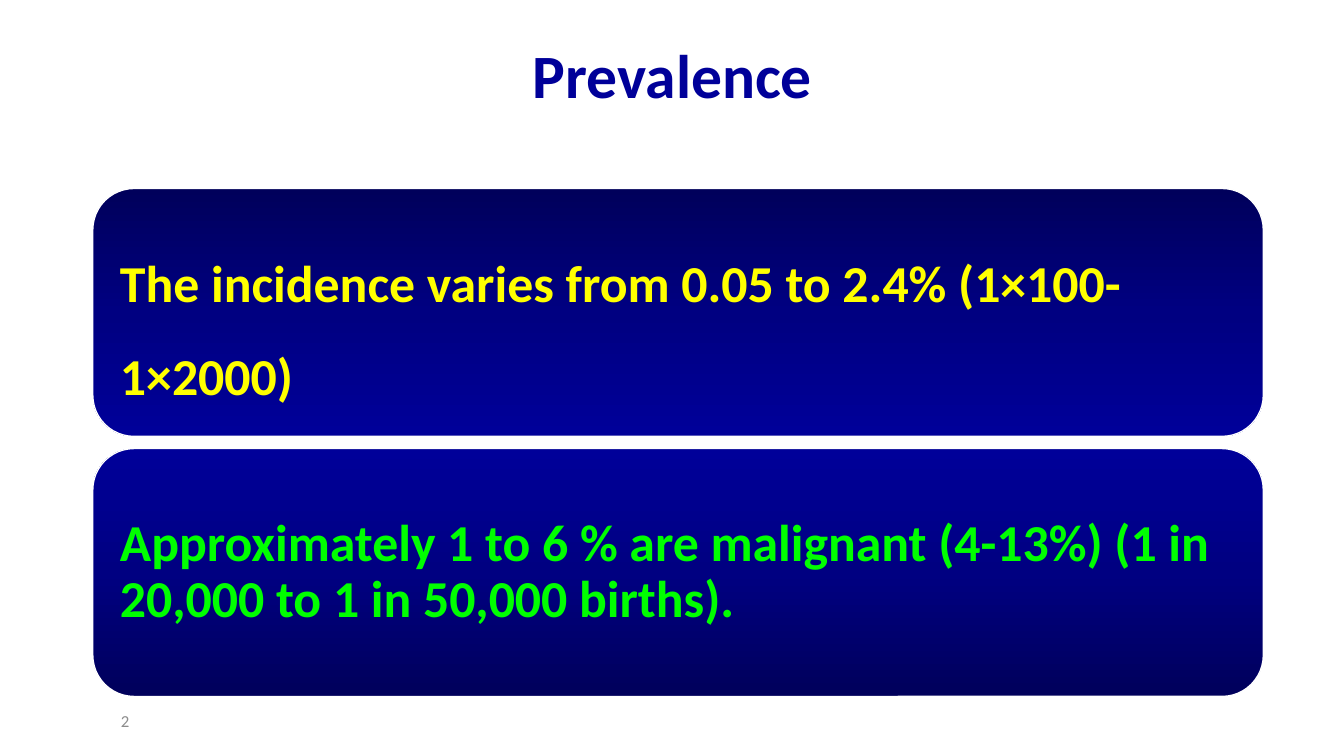
from copy import deepcopy
from dataclasses import dataclass

from pptx import Presentation
from pptx.dml.color import RGBColor
from pptx.enum.shapes import MSO_SHAPE
from pptx.enum.text import MSO_ANCHOR, MSO_AUTO_SIZE, PP_ALIGN
from pptx.oxml.ns import qn
from pptx.util import Inches, Pt


@dataclass(frozen=True)
class Theme:
    """Colours, font and type sizes of the slide."""
    font: str = "Calibri"
    title: str = "000099"
    incidence: str = "FFFF00"
    malignant: str = "00FF00"
    number: str = "8C8C8C"
    outline: str = "FFFFFF"
    gradient: tuple = ((0, "00005B"), (0.5, "000081"), (1, "000099"))
    title_size: int = 44
    card_size: int = 37
    number_size: int = 12


THEME = Theme()
TITLE_BOX = (0.92, 0.4, 11.5, 1.45)
CARDS_BOX = (0.92, 1.87, 11.61, 5.04)
NUMBER_BOX = (1.1, 6.95, 3, 0.4)
CARD_GAP = 0.12
CARDS = (
    ("The incidence varies from 0.05 to 2.4% (1×100-1×2000)",
     THEME.incidence, 1.5, 270),
    ("Approximately 1 to 6 % are malignant (4-13%) (1 in 20,000 to 1 in 50,000 births).",
     THEME.malignant, 0.9, 90),
)


def write_text(shape, text, size, color, bold, alignment, line_spacing=1.0):
    """Put one formatted paragraph into a shape."""
    frame = shape.text_frame
    frame.word_wrap = True
    frame.auto_size = MSO_AUTO_SIZE.NONE
    frame.vertical_anchor = MSO_ANCHOR.MIDDLE
    frame.text = text
    paragraph = frame.paragraphs[0]
    paragraph.alignment = alignment
    paragraph.line_spacing = line_spacing
    paragraph.font.name = THEME.font
    paragraph.font.size = Pt(size)
    paragraph.font.bold = bold
    paragraph.font.color.rgb = RGBColor.from_string(color)


def fill_gradient(shape, angle):
    """Give a shape the three-stop blue gradient at an anticlockwise angle."""
    shape.fill.gradient()
    shape.fill.gradient_angle = angle
    stop_list = shape.fill._xPr.find(qn("a:gradFill")).find(qn("a:gsLst"))
    stop_list.insert(1, deepcopy(stop_list[0]))
    for stop, (position, color) in zip(shape.fill.gradient_stops, THEME.gradient):
        stop.position = position
        stop.color.rgb = RGBColor.from_string(color)


def add_title(slide, box):
    """Place the slide title at the top of its box."""
    title = slide.shapes.title
    title.left, title.top, title.width, title.height = map(Inches, box)
    write_text(title, "Prevalence", THEME.title_size, THEME.title, True,
               PP_ALIGN.CENTER, 0.9)
    title.text_frame.vertical_anchor = MSO_ANCHOR.TOP


def add_cards(slide, box):
    """Stack the rounded statement cards evenly in the box."""
    left, top, width, height = box
    card_height = (height - CARD_GAP * (len(CARDS) - 1)) / len(CARDS)
    for index, (text, color, line_spacing, angle) in enumerate(CARDS):
        card_top = top + index * (card_height + CARD_GAP)
        card = slide.shapes.add_shape(
            MSO_SHAPE.ROUNDED_RECTANGLE,
            *map(Inches, (left, card_top, width, card_height)))
        card.shadow.inherit = False
        fill_gradient(card, angle)
        card.line.color.rgb = RGBColor.from_string(THEME.outline)
        card.line.width = Pt(1)
        write_text(card, text, THEME.card_size, color, True,
                   PP_ALIGN.LEFT, line_spacing)
        frame = card.text_frame
        frame.margin_left = frame.margin_right = Inches(0.15)
        frame.margin_top = frame.margin_bottom = Inches(0.15)


def add_slide_number(slide, box):
    """Place the slide number in the bottom left corner."""
    number = slide.shapes.add_textbox(*map(Inches, box))
    write_text(number, "2", THEME.number_size, THEME.number, False, PP_ALIGN.LEFT)


def main():
    """Build the prevalence slide and save it."""
    presentation = Presentation()
    presentation.slide_width = Inches(13.33)
    presentation.slide_height = Inches(7.5)
    slide = presentation.slides.add_slide(presentation.slide_layouts[5])
    add_title(slide, TITLE_BOX)
    add_cards(slide, CARDS_BOX)
    add_slide_number(slide, NUMBER_BOX)
    presentation.save("out.pptx")


if __name__ == "__main__":
    main()
